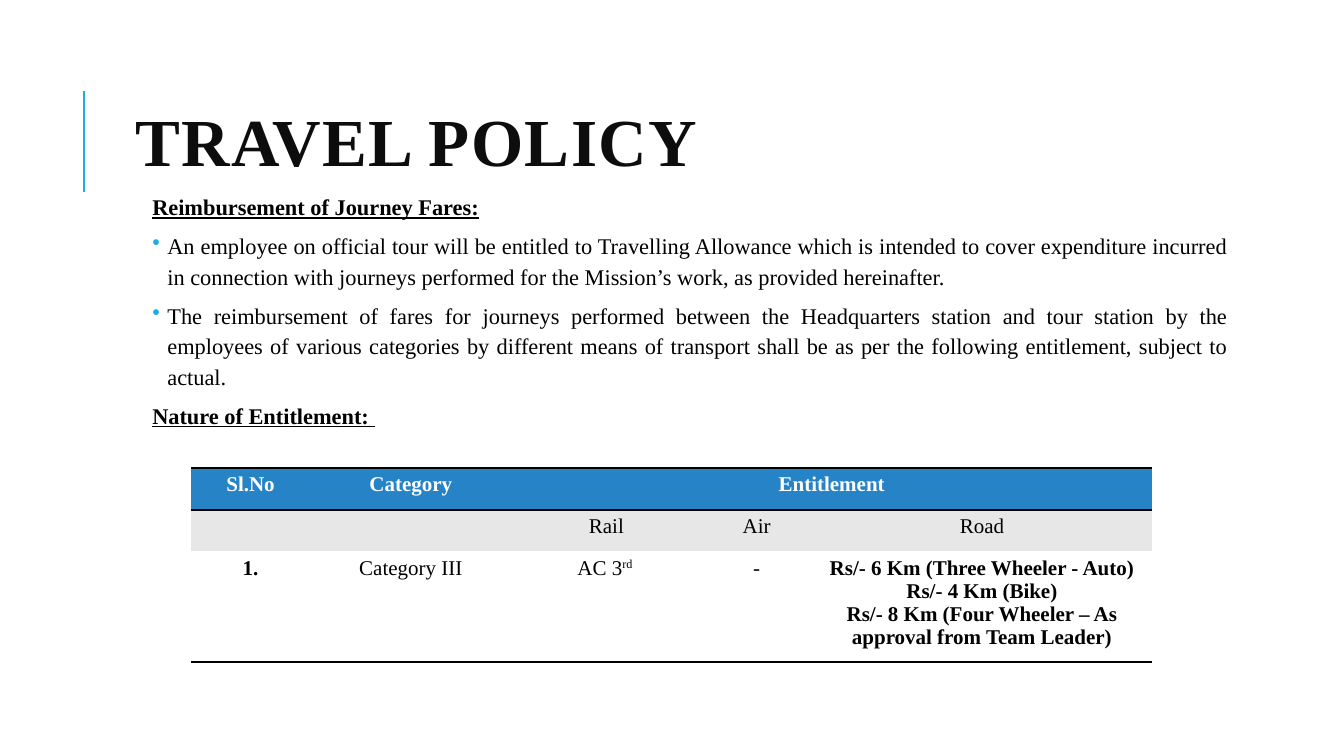
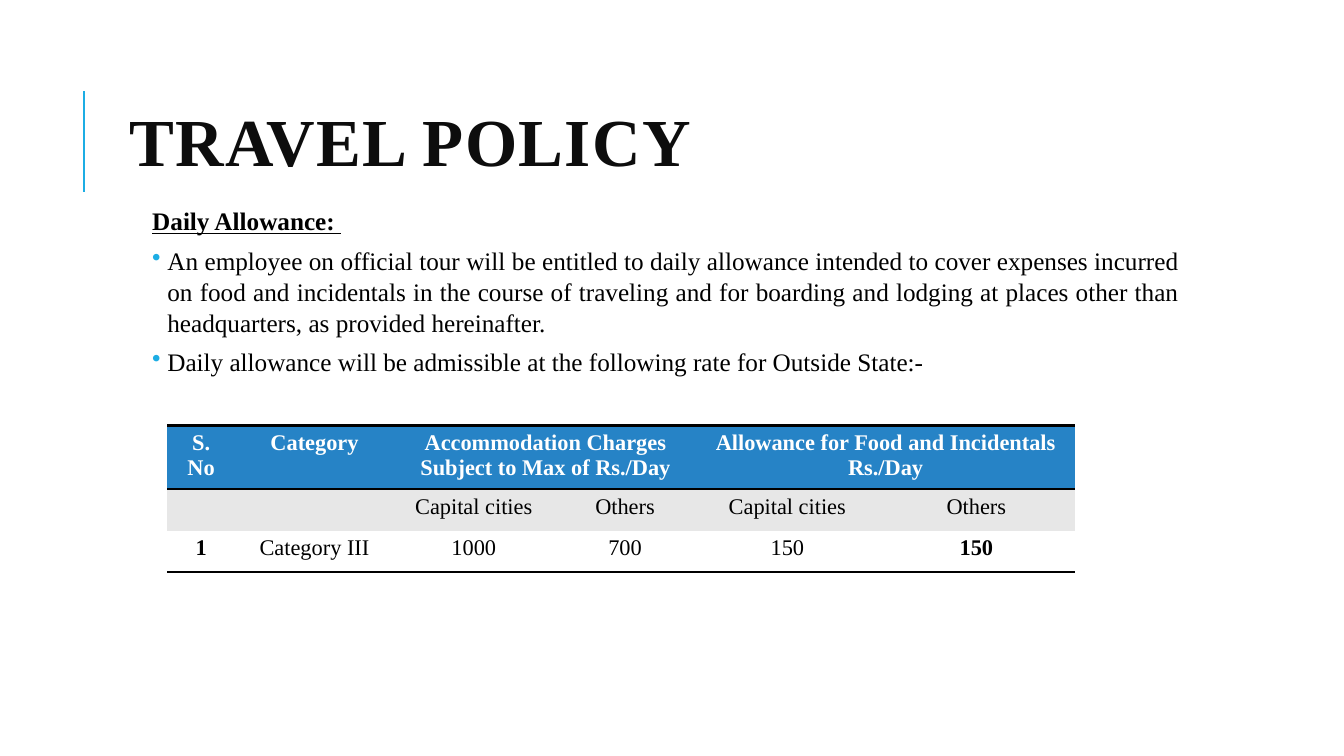
from lxml import etree
from pptx import Presentation
from pptx.dml.color import RGBColor
from pptx.enum.shapes import MSO_CONNECTOR
from pptx.enum.text import MSO_ANCHOR, MSO_AUTO_SIZE, PP_ALIGN
from pptx.oxml.ns import qn
from pptx.util import Inches, Pt

LEFT, CENTER, JUSTIFY = PP_ALIGN.LEFT, PP_ALIGN.CENTER, PP_ALIGN.JUSTIFY
MIDDLE, NO_FIT = MSO_ANCHOR.MIDDLE, MSO_AUTO_SIZE.NONE
STRAIGHT = MSO_CONNECTOR.STRAIGHT

FACE = "Times New Roman"
BLACK, WHITE, INK = "000000", "FFFFFF", "0D0D0D"
ACCENT, HEAD, BAND = "1CADE4", "2683C6", "E7E7E7"
PLAIN_TABLE = "{2D5ABB26-0587-4C30-8999-92F81FD0307C}"


def rgb(code):
    return RGBColor.from_string(code)


def style(para, size, color=BLACK, bold=False, align=CENTER):
    para.alignment = align
    font = para.font
    font.name, font.size, font.bold = FACE, Pt(size), bold
    font.color.rgb = rgb(color)


def add_xml(parent, tag, **attrs):
    return etree.SubElement(parent, qn(tag), attrs)


def add_title(slide, text, left):
    """Place the title and the accent rule beside it."""
    rule = slide.shapes.add_connector(
        STRAIGHT, Inches(0.83), Inches(1.9), Inches(0.83), Inches(0.9))
    rule.line.color.rgb = rgb(ACCENT)
    rule.line.width = Pt(1.5)
    add_xml(rule.element.spPr, "a:effectLst")

    title = slide.shapes.title
    title.left, title.top = Inches(left), Inches(0.64)
    title.width, title.height = Inches(10.63), Inches(1.64)
    frame = title.text_frame
    frame.text = text
    frame.vertical_anchor, frame.auto_size = MIDDLE, NO_FIT
    para = frame.paragraphs[0]
    style(para, 48, INK, True, LEFT)
    para.line_spacing = 0.8
    para.runs[0]._r.get_or_add_rPr().set("spc", "100")


def set_bullet(para, marked):
    props = para._p.get_or_add_pPr()
    left, hang = (0.49, -0.15) if marked else (0.34, 0)
    props.set("marL", str(Inches(left)))
    props.set("indent", str(Inches(hang)))
    if marked:
        color = etree.Element(qn("a:buClr"))
        add_xml(color, "a:srgbClr", val=ACCENT)
        char = etree.Element(qn("a:buChar"), char="•")
        props.find(qn("a:defRPr")).addprevious(color)
        color.addnext(char)


def add_body(slide, box, size, items):
    """Items are (text, is heading, line spacing)."""
    frame = slide.shapes.add_textbox(*map(Inches, box)).text_frame
    frame.word_wrap = True
    frame.margin_left = frame.margin_right = Inches(0.05)
    frame.margin_top = frame.margin_bottom = Inches(0.05)
    for i, (text, heading, spacing) in enumerate(items):
        para = frame.add_paragraph() if i else frame.paragraphs[0]
        para.text = text
        style(para, size, bold=heading, align=JUSTIFY)
        para.font.underline = heading
        para.line_spacing = spacing
        para.space_before, para.space_after = Pt(2), Pt(4)
        set_bullet(para, not heading)


def set_edges(cell, tags):
    props = cell._tc.get_or_add_tcPr()
    for i, tag in enumerate(tags):
        line = etree.Element(qn(tag), w=str(Pt(2)))
        fill = add_xml(line, "a:solidFill")
        add_xml(fill, "a:srgbClr", val=BLACK)
        props.insert(i, line)


def fill_cell(cell, text, size, color, bold):
    """Write the text; a part after ^ is raised."""
    frame = cell.text_frame
    base, _, raised = text.partition("^")
    frame.text = base
    if raised:
        run = frame.paragraphs[0].add_run()
        run.text = raised
        run._r.get_or_add_rPr().set("baseline", "30000")
    for para in frame.paragraphs:
        style(para, size, color, bold)


def add_grid(slide, spot, cols, rows, size, cells, spans):
    """Spans are (first, last) columns merged in the top row."""
    box = (*spot, sum(cols), sum(rows))
    shape = slide.shapes.add_table(len(rows), len(cols), *map(Inches, box))
    for ident in shape.element.iter(qn("a:tableStyleId")):
        ident.text = PLAIN_TABLE
    table = shape.table
    table.first_row = table.horz_banding = False
    for col, width in zip(table.columns, cols):
        col.width = Inches(width)
    for row, height in zip(table.rows, rows):
        row.height = Inches(height)

    fills = (HEAD, BAND, WHITE)
    edges = (("a:lnT", "a:lnB"), (), ("a:lnB",))
    ends = (0, len(cols) - 1)
    for r, texts in enumerate(cells):
        for c, text in enumerate(texts):
            cell = table.cell(r, c)
            cell.fill.solid()
            cell.fill.fore_color.rgb = rgb(fills[r])
            set_edges(cell, edges[r])
            bold = r == 0 or (r == 2 and c in ends)
            fill_cell(cell, text, size, BLACK if r else WHITE, bold)
    for first, last in spans:
        table.cell(0, first).merge(table.cell(0, last))


def add_page(deck, left):
    slide = deck.slides.add_slide(deck.slide_layouts[5])
    add_title(slide, "TRAVEL POLICY", left)
    return slide


def fares(deck):
    slide = add_page(deck, 1.24)
    add_body(slide, (1.12, 1.83, 11.11, 2.5), 16, [
        ("Reimbursement of Journey Fares:", True, 1.14),
        ("An employee on official tour will be entitled to Travelling "
         "Allowance which is intended to cover expenditure incurred in "
         "connection with journeys performed for the Mission’s work, as "
         "provided hereinafter.", False, 1.14),
        ("The reimbursement of fares for journeys performed between the "
         "Headquarters station and tour station by the employees of various "
         "categories by different means of transport shall be as per the "
         "following entitlement, subject to actual.", False, 1.14),
        ("Nature of Entitlement: ", True, 1.14),
    ])
    road = ("Rs/- 6 Km (Three Wheeler - Auto)\nRs/- 4 Km (Bike)\n"
            "Rs/- 8 Km (Four Wheeler – As approval from Team Leader)")
    add_grid(slide, (1.89, 4.64), (1.19, 1.99, 1.89, 1.09, 3.38),
             (0.42, 0.41, 1.02), 15, [
                 ("Sl.No", "Category", "Entitlement", "", ""),
                 ("", "", "Rail", "Air", "Road"),
                 ("1.", "Category III", "AC 3^rd ", "-", road),
             ], [(2, 4)])


def daily(deck):
    slide = add_page(deck, 1.18)
    add_body(slide, (1.12, 1.9, 10.63, 2), 18, [
        ("Daily Allowance: ", True, 1.3),
        ("An employee on official tour will be entitled to daily allowance "
         "intended to cover expenses incurred on food and incidentals in the "
         "course of traveling and for boarding and lodging at places other "
         "than headquarters, as provided hereinafter.", False, 1.03),
        ("Daily allowance will be admissible at the following rate for "
         "Outside State:-", False, 1.03),
    ])
    add_grid(slide, (1.66, 4.22), (0.67, 1.58, 1.58, 1.42, 1.8, 1.95),
             (0.6, 0.41, 0.41), 16, [
                 ("S. No", "Category",
                  "Accommodation Charges Subject to Max of Rs./Day", "",
                  "Allowance for Food and Incidentals Rs./Day", ""),
                 ("", "", "Capital cities", "Others",
                  "Capital cities", "Others"),
                 ("1", "Category III", "1000", "700", "150", "150"),
             ], [(2, 3), (4, 5)])


def main():
    deck = Presentation()
    deck.slide_width, deck.slide_height = Inches(13.33), Inches(7.5)
    fares(deck)
    daily(deck)
    deck.save("out.pptx")


if __name__ == "__main__":
    main()
